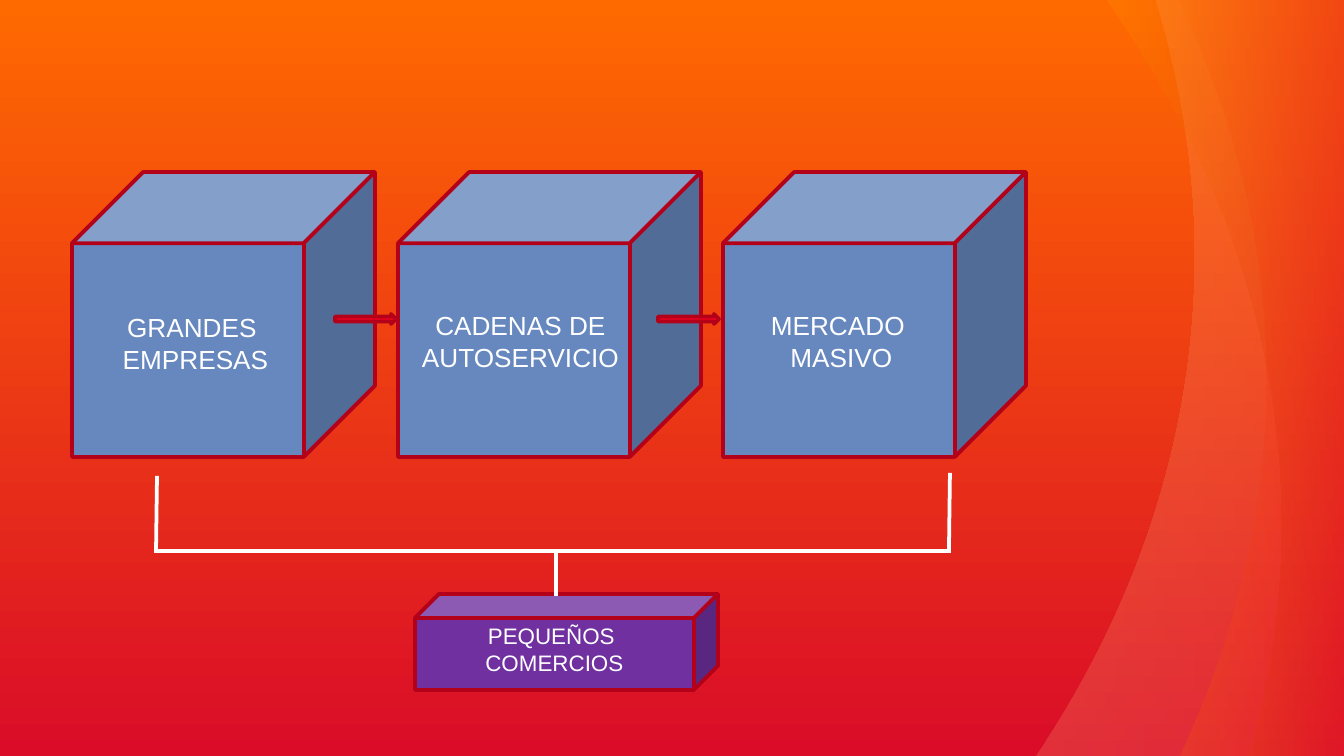
from lxml import etree
from pptx import Presentation
from pptx.dml.color import RGBColor
from pptx.enum.shapes import MSO_CONNECTOR, MSO_SHAPE
from pptx.enum.text import MSO_AUTO_SIZE, PP_ALIGN
from pptx.oxml.ns import qn
from pptx.util import Pt

CUBE = MSO_SHAPE.CUBE
RIGHT_ARROW = MSO_SHAPE.RIGHT_ARROW
STRAIGHT = MSO_CONNECTOR.STRAIGHT
CENTER = PP_ALIGN.CENTER
FIT_TEXT = MSO_AUTO_SIZE.SHAPE_TO_FIT_TEXT

EMU_PER_PX = 914400 / 134.4
WIDTH, HEIGHT = 1344, 756
BLANK_LAYOUT = 6
COLORS = {
    "sky": "FF6A00",
    "ground": "DA0C28",
    "peach": "FFC486",
    "coral": "FF866B",
    "amber": "FF9F00",
    "crimson": "CC0000",
    "red": "F20122",
    "outline": "B30119",
    "blue": "6788BF",
    "purple": "7030A0",
    "white": "FFFFFF",
}
BANDS = [
    ([(1195, 255), (1195, 168), (1181, 82), (1156, 0)],
     [(1036, 756), (1138, 605), (1195, 434), (1195, 255)], "peach", "coral"),
    ([(1267, 379), (1267, 247), (1236, 120), (1179, 0)],
     [(1180, 756), (1236, 638), (1267, 511), (1267, 379)], "sky", "red"),
    ([(1282, 524), (1282, 337), (1219, 160), (1107, 0)],
     [(1249, 756), (1270, 683), (1282, 605), (1282, 524)], "amber", "crimson"),
]
BRACKET = [
    ((157, 476), (156, 553)),
    ((950, 473), (949, 551)),
    ((156, 551), (951, 551)),
    ((556, 553), (556, 596)),
]
STAGE_LEFTS = (72, 723, 398)
STAGE_LABELS = [
    (["GRANDES ", "EMPRESAS"], 108, 305, 175),
    (["CADENAS DE", "AUTOSERVICIO"], 407, 303, 227),
    (["MERCADO ", "MASIVO"], 757, 303, 169),
]


def px(value):
    return round(value * EMU_PER_PX)


def color(name):
    return RGBColor.from_string(COLORS[name])


def merge_into_curve(segments):
    first = segments[0]
    first.tag = qn("a:cubicBezTo")
    for segment in segments[1:]:
        first.append(segment[0])
        segment.getparent().remove(segment)


class Painter:
    """Draws styled elements on one slide, measured in px."""

    def __init__(self, slide, font="Arial", line_width=2):
        self.slide = slide
        self.shapes = slide.shapes
        self.font = font
        self.line_width = Pt(line_width)

    def gradient(self, fill, start, end, angle):
        fill.gradient()
        fill.gradient_angle = angle
        for stop, name, position in zip(fill.gradient_stops, (start, end), (0, 1)):
            stop.color.rgb = color(name)
            stop.position = position

    def background(self, start, end):
        self.gradient(self.slide.background.fill, start, end, 270)

    def band(self, upper, lower, start, end, opacity=20):
        points = upper + [(WIDTH, 0), (WIDTH, HEIGHT)] + lower
        builder = self.shapes.build_freeform(*points[0], scale=EMU_PER_PX)
        builder.add_line_segments(points[1:], close=True)
        shape = builder.convert_to_shape()
        segments = list(shape._element.iter(qn("a:lnTo")))
        merge_into_curve(segments[:3])
        merge_into_curve(segments[6:9])
        shape.shadow.inherit = False
        shape.line.fill.background()
        self.gradient(shape.fill, start, end, 0)
        for stop_color in shape._element.spPr.iter(qn("a:srgbClr")):
            etree.SubElement(stop_color, qn("a:alpha"), val=str(opacity * 1000))

    def solid(self, kind, left, top, width, height, fill):
        shape = self.shapes.add_shape(kind, px(left), px(top), px(width), px(height))
        shape.shadow.inherit = False
        shape.fill.solid()
        shape.fill.fore_color.rgb = color(fill)
        shape.line.color.rgb = color("outline")
        shape.line.width = self.line_width

    def line(self, start, end):
        connector = self.shapes.add_connector(STRAIGHT, *map(px, start + end))
        connector.line.color.rgb = color("white")
        connector.line.width = self.line_width
        etree.SubElement(connector._element.spPr, qn("a:effectLst"))

    def label(self, lines, left, top, width, height, size):
        box = self.shapes.add_textbox(px(left), px(top), px(width), px(height))
        frame = box.text_frame
        frame.word_wrap = False
        frame.auto_size = FIT_TEXT
        frame.text = "\n".join(lines)
        for paragraph in frame.paragraphs:
            paragraph.alignment = CENTER
            paragraph.font.name = self.font
            paragraph.font.size = Pt(size)
            paragraph.font.color.rgb = color("white")


def main():
    presentation = Presentation()
    presentation.slide_width = px(WIDTH)
    presentation.slide_height = px(HEIGHT)
    layout = presentation.slide_layouts[BLANK_LAYOUT]
    painter = Painter(presentation.slides.add_slide(layout))

    painter.background("sky", "ground")
    for upper, lower, start, end in BANDS:
        painter.band(upper, lower, start, end)

    painter.solid(CUBE, 415, 594, 303, 96, "purple")
    painter.label(["PEQUEÑOS ", "COMERCIOS"], 471, 616, 167, 67, 12)
    for start, end in BRACKET:
        painter.line(start, end)

    for left in STAGE_LEFTS:
        painter.solid(CUBE, left, 172, 303, 285, "blue")
    for lines, left, top, width in STAGE_LABELS:
        painter.label(lines, left, top, width, 77, 14)
    for left in (335, 658):
        painter.solid(RIGHT_ARROW, left, 314, 61, 10, "red")

    presentation.save("out.pptx")


if __name__ == "__main__":
    main()
